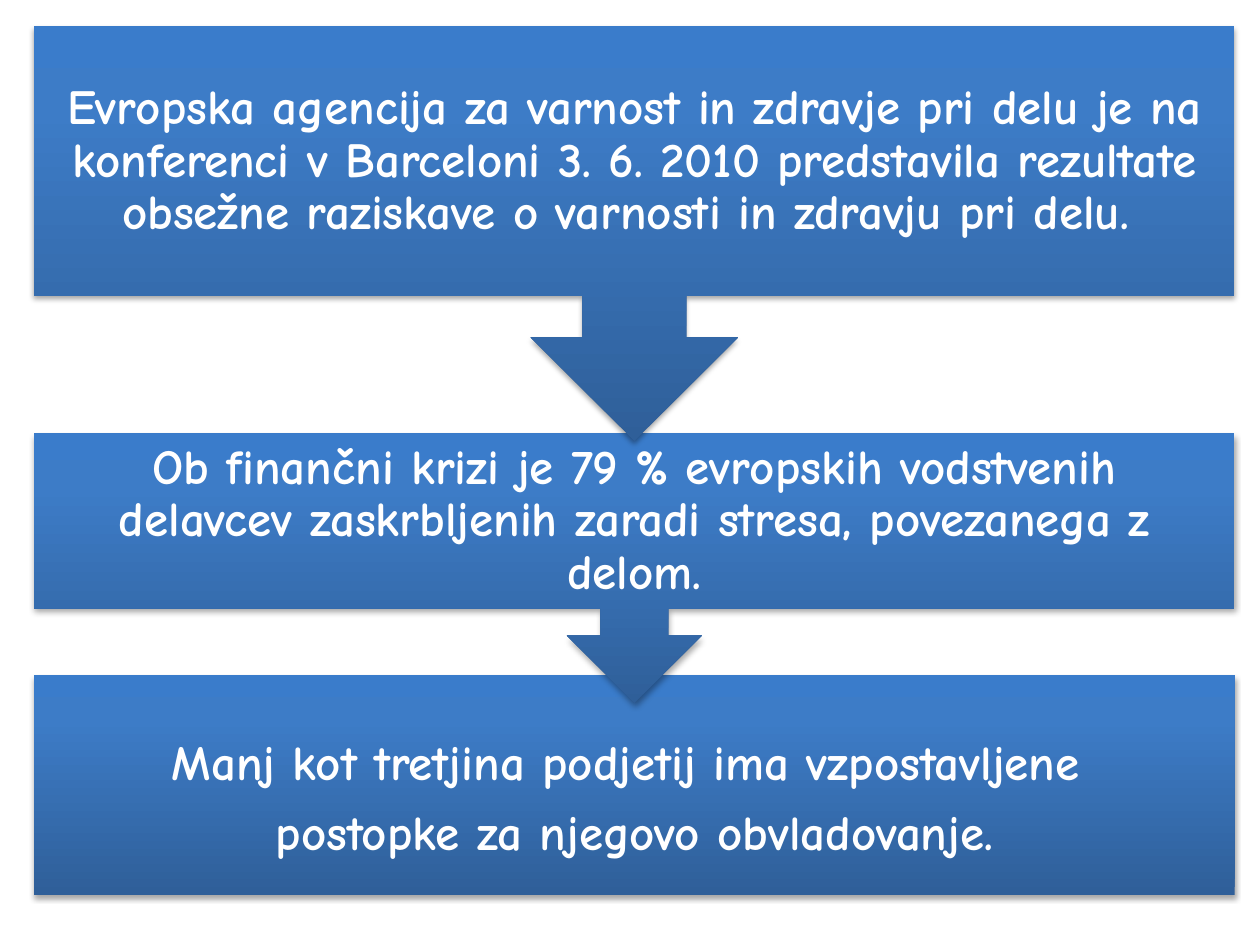
"""Build a slide of three stacked statements linked by downward arrows."""
from dataclasses import dataclass

from pptx import Presentation
from pptx.dml.color import RGBColor
from pptx.enum.shapes import MSO_SHAPE as SHAPE
from pptx.enum.text import MSO_ANCHOR as ANCHOR, PP_ALIGN as ALIGN
from pptx.oxml import parse_xml
from pptx.oxml.ns import nsdecls
from pptx.util import Inches, Pt

WHITE = RGBColor(0xFF, 0xFF, 0xFF)
DARK_BLUE = RGBColor(0x2F, 0x5F, 0x99)
MID_BLUE = RGBColor(0x3D, 0x7C, 0xC7)
LIGHT_BLUE = RGBColor(0x3A, 0x7C, 0xCB)
STOPS = ((0, DARK_BLUE), (80, MID_BLUE), (100, LIGHT_BLUE))
LEFT, WIDTH, INSET = 0.27, 9.53, 0.22
FONT = {"name": "Comic Neue", "size": Pt(28), "bold": True}
PARAGRAPH = {"alignment": ALIGN.CENTER, "line_spacing": 0.9, "space_after": Pt(9.8)}


@dataclass
class Step:
    kind: SHAPE
    top: float
    height: float
    lines: tuple[str, ...]
    top_inset: float = INSET


STEPS = (
    Step(SHAPE.RECTANGLE, 5.36, 1.74, (
        "Manj kot tretjina podjetij ima vzpostavljene ",
        "postopke za njegovo obvladovanje."), 0.46),
    Step(SHAPE.DOWN_ARROW_CALLOUT, 3.44, 2.14, (
        "Ob finančni krizi je 79 % evropskih vodstvenih delavcev "
        "zaskrbljenih zaradi stresa, povezanega z delom.",)),
    Step(SHAPE.DOWN_ARROW_CALLOUT, 0.21, 3.29, (
        "Evropska agencija za varnost in zdravje pri delu je na konferenci "
        "v Barceloni 3. 6. 2010 predstavila rezultate obsežne raziskave "
        "o varnosti in zdravju pri delu. ",)),
)


def set_format(target: object, values: dict) -> None:
    for name, value in values.items():
        setattr(target, name, value)


def paint(sp) -> None:
    stops = "".join(
        f'<a:gs pos="{pos * 1000}"><a:srgbClr val="{color}"/></a:gs>'
        for pos, color in STOPS)
    sp.fill.gradient()
    sp.fill.gradient_angle = 90
    grad = sp._element.spPr.gradFill
    grad.replace(grad.gsLst, parse_xml(f'<a:gsLst {nsdecls("a")}>{stops}</a:gsLst>'))
    sp.line.fill.background()
    sp._element.spPr.append(parse_xml(
        f'<a:effectLst {nsdecls("a")}>'
        f'<a:outerShdw blurRad="{Pt(3.1)}" dist="{Pt(1.8)}" dir="5400000" rotWithShape="0">'
        '<a:srgbClr val="000000"><a:alpha val="35000"/></a:srgbClr>'
        '</a:outerShdw></a:effectLst>'))


def add_step(slide, step: Step) -> None:
    sp = slide.shapes.add_shape(
        step.kind, Inches(LEFT), Inches(step.top), Inches(WIDTH), Inches(step.height))
    paint(sp)
    tf = sp.text_frame
    set_format(tf, {
        "word_wrap": True, "vertical_anchor": ANCHOR.MIDDLE,
        "margin_left": Inches(INSET), "margin_right": Inches(INSET),
        "margin_top": Inches(step.top_inset), "margin_bottom": Inches(INSET)})
    for i, line in enumerate(step.lines):
        p = tf.add_paragraph() if i else tf.paragraphs[0]
        set_format(p, PARAGRAPH)
        r = p.add_run()
        r.text = line
        set_format(r.font, FONT)
        r.font.color.rgb = WHITE


def main() -> None:
    prs = Presentation()
    prs.slide_width, prs.slide_height = Inches(10), Inches(7.5)
    slide = prs.slides.add_slide(prs.slide_layouts[6])
    for step in STEPS:
        add_step(slide, step)
    prs.save("out.pptx")


if __name__ == "__main__":
    main()
